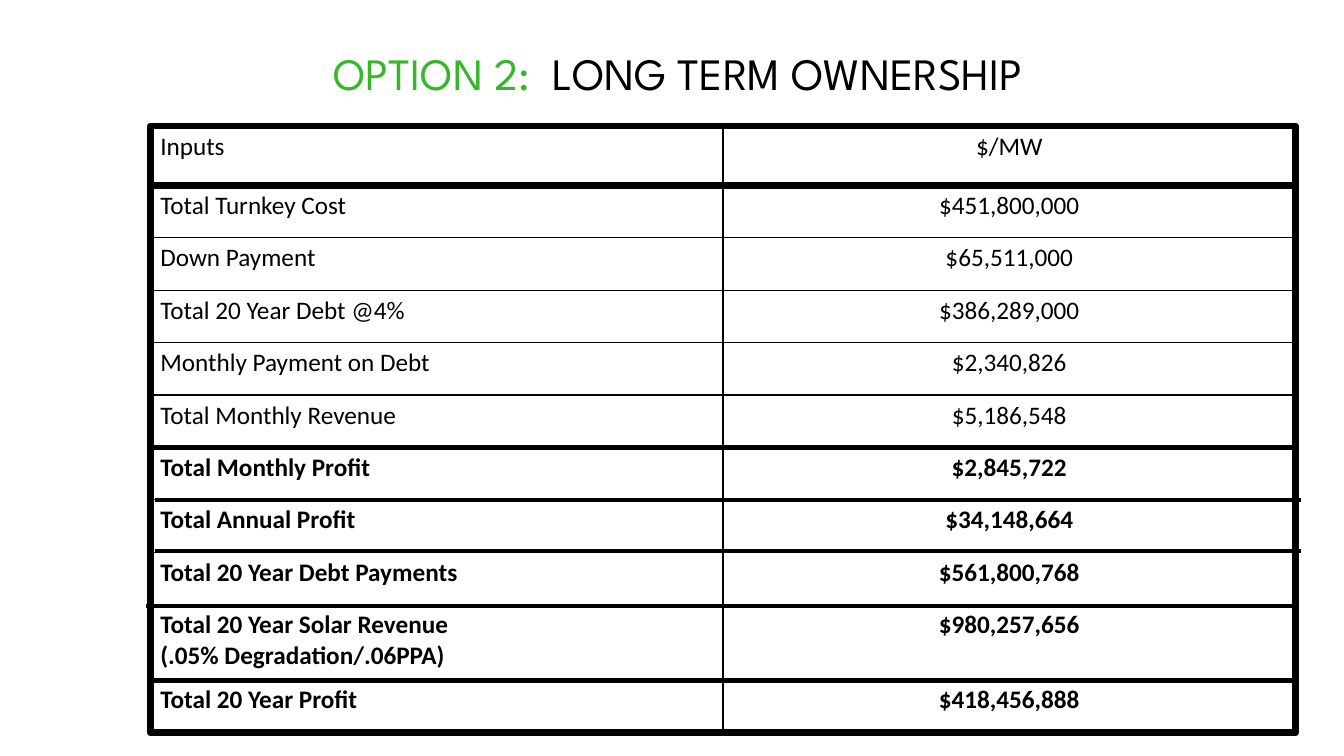
from lxml.etree import SubElement as SubEl
from pptx import Presentation
from pptx.dml.color import RGBColor
from pptx.enum.shapes import MSO_CONNECTOR as LINK, MSO_SHAPE as SHAPE
from pptx.enum.text import MSO_ANCHOR as ANCHOR, PP_ALIGN as ALIGN
from pptx.oxml.ns import qn
from pptx.util import Pt

SCALE = 9144
BLACK = RGBColor(0x00, 0x00, 0x00)
GREEN = RGBColor(0x35, 0xB7, 0x29)
LEFT, TOP, WIDTH = 149, 125, 1136
HEAD, ROW, TALL = 59, 52, 74

ROWS = [
    ("Inputs", "$/MW"),
    ("Total Turnkey Cost", "$451,800,000"),
    ("Down Payment", "$65,511,000"),
    ("Total 20 Year Debt @4%", "$386,289,000"),
    ("Monthly Payment on Debt", "$2,340,826"),
    ("Total Monthly Revenue", "$5,186,548"),
    ("Total Monthly Profit", "$2,845,722"),
    ("Total Annual Profit", "$34,148,664"),
    ("Total 20 Year Debt Payments", "$561,800,768"),
    ("Total 20 Year Solar Revenue\n(.05% Degradation/.06PPA)", "$980,257,656"),
    ("Total 20 Year Profit", "$418,456,888"),
]
BOLD = 6
RULES = [
    (149, 184, 5),
    (149, 444, 3),
    (154, 496, 3),
    (154, 547, 3),
    (145, 601, 3),
    (147, 675, 3),
]


def px(num):
    return num * SCALE


def style(run, face, size, color, bold=False):
    font = run.font
    font.name = face
    font.size = Pt(size)
    font.bold = bold
    font.color.rgb = color


def add_title(slide, parts):
    box = slide.shapes.add_textbox(px(61), px(40), px(1224), px(64))
    frame = box.text_frame
    frame.word_wrap = True
    para = frame.paragraphs[0]
    para.alignment = ALIGN.CENTER
    for text, color in parts:
        run = para.add_run()
        run.text = text
        style(run, "League Spartan", 32, color)


def edge(cell):
    props = cell._tc.get_or_add_tcPr()
    for side in ("lnL", "lnR", "lnT", "lnB"):
        line = SubEl(props, qn("a:" + side), w=str(Pt(1)))
        fill = SubEl(line, qn("a:solidFill"))
        SubEl(fill, qn("a:srgbClr"), val=str(BLACK))


def fill_cell(cell, text, align, bold):
    edge(cell)
    cell.fill.background()
    cell.vertical_anchor = ANCHOR.TOP
    cell.text_frame.text = text
    for para in cell.text_frame.paragraphs:
        para.alignment = align
        for run in para.runs:
            style(run, "Calibri", 18, BLACK, bold)


def add_grid(slide, sizes):
    frame = slide.shapes.add_table(
        len(ROWS), 2, px(LEFT), px(TOP), px(WIDTH), px(sum(sizes)))
    table = frame.table
    table.first_row = False
    table.horz_banding = False
    for col in table.columns:
        col.width = px(WIDTH // 2)
    for num, (pair, size) in enumerate(zip(ROWS, sizes)):
        table.rows[num].height = px(size)
        for col, align in enumerate((ALIGN.LEFT, ALIGN.CENTER)):
            fill_cell(table.cell(num, col), pair[col], align, num >= BOLD)


def add_frame(slide, height):
    rect = slide.shapes.add_shape(
        SHAPE.RECTANGLE, px(LEFT), px(TOP), px(WIDTH), px(height))
    rect.shadow.inherit = False
    rect.fill.background()
    rect.line.color.rgb = BLACK
    rect.line.width = Pt(5)


def add_rule(slide, left, top, weight):
    rule = slide.shapes.add_connector(
        LINK.STRAIGHT, px(left), px(top), px(left + WIDTH), px(top))
    rule.line.color.rgb = BLACK
    rule.line.width = Pt(weight)
    SubEl(rule._element.spPr, qn("a:effectLst"))


def main():
    deck = Presentation()
    deck.slide_width = px(1333)
    deck.slide_height = px(750)
    slide = deck.slides.add_slide(deck.slide_layouts[6])
    sizes = [HEAD] + [ROW] * 8 + [TALL, ROW]
    add_title(slide, [("OPTION 2:  ", GREEN), ("LONG TERM OWNERSHIP", BLACK)])
    add_grid(slide, sizes)
    add_frame(slide, 602)
    for rule in RULES:
        add_rule(slide, *rule)
    deck.save("out.pptx")


if __name__ == "__main__":
    main()
